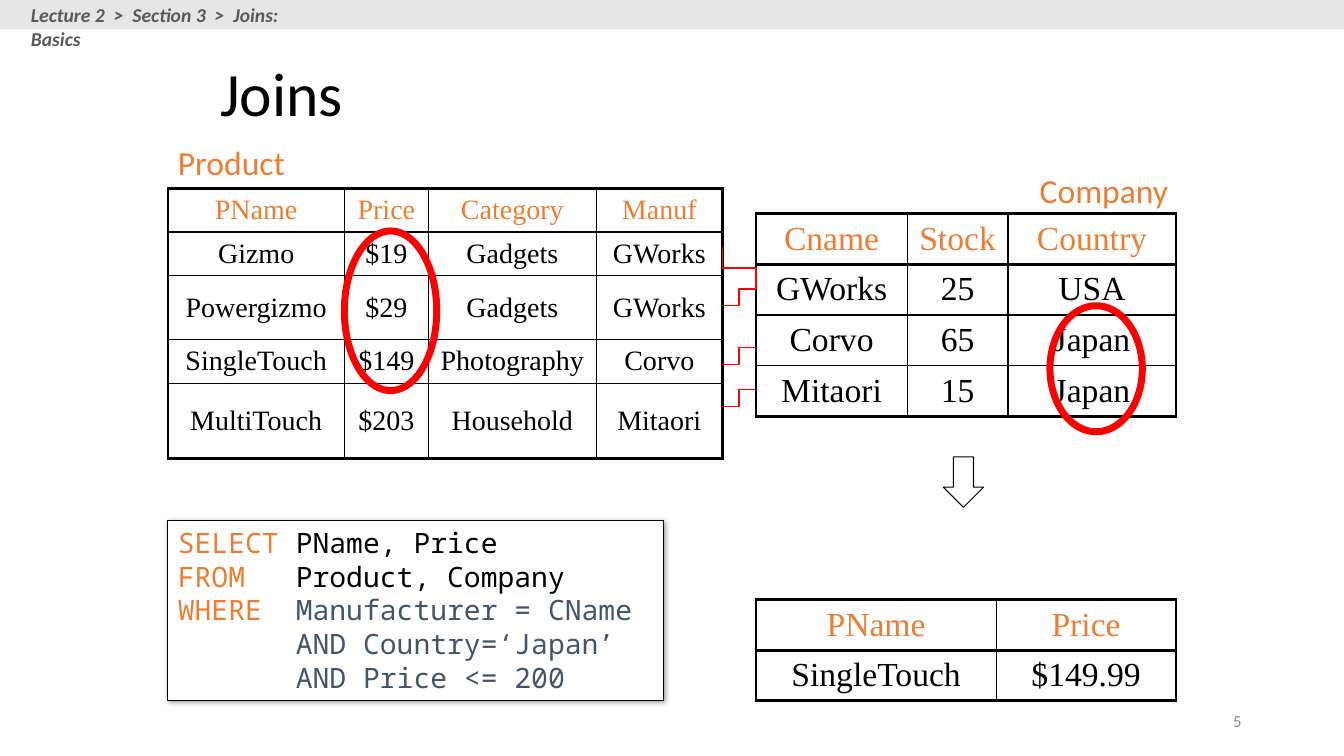
from lxml.etree import SubElement
from pptx import Presentation
from pptx.dml.color import RGBColor
from pptx.enum.shapes import MSO_CONNECTOR, MSO_SHAPE
from pptx.enum.text import MSO_ANCHOR as Anchor, PP_ALIGN as Align
from pptx.oxml import parse_xml
from pptx.oxml.ns import nsdecls, qn
from pptx.util import Inches, Pt

COLORS = {
    "black": "000000", "white": "FFFFFF", "orange": "ED7D31", "red": "FF0000",
    "slate": "44546A", "bar": "E7E6E6", "crumb": "595959", "number": "8C8C8C",
}
COLUMNS, ROWS = 160, 90  # twelve grid units to the inch
THICK, THIN = 2.25, 1

PRODUCTS = [
    ["PName", "Price", "Category", "Manuf"],
    ["Gizmo", "$19", "Gadgets", "GWorks"],
    ["Powergizmo", "$29", "Gadgets", "GWorks"],
    ["SingleTouch", "$149", "Photography", "Corvo"],
    ["MultiTouch", "$203", "Household", "Mitaori"],
]
COMPANIES = [
    ["Cname", "Stock", "Country"],
    ["GWorks", "25", "USA"],
    ["Corvo", "65", "Japan"],
    ["Mitaori", "15", "Japan"],
]
RESULT = [["PName", "Price"], ["SingleTouch", "$149.99"]]
QUERY = [
    ("SELECT", "PName, Price", "black"),
    ("FROM", "Product, Company", "black"),
    ("WHERE", "Manufacturer = CName", "slate"),
    ("", "AND Country=‘Japan’", "slate"),
    ("", "AND Price <= 200", "slate"),
]


def grid(*units):
    return [Inches(unit / 12) for unit in units]


def rgb(color):
    return RGBColor.from_string(COLORS[color])


def style_run(run, size, color, face="Calibri"):
    run.font.size = Pt(size)
    run.font.name = face
    run.font.color.rgb = rgb(color)


def add_label(slide, box, text, size, color, wrap=False):
    frame = slide.shapes.add_textbox(*grid(*box)).text_frame
    frame.word_wrap = wrap
    frame.text = text
    style_run(frame.paragraphs[0].runs[0], size, color)
    return frame


def add_figure(slide, preset, box, fill=None, line=None, width=0.75):
    figure = slide.shapes.add_shape(preset, *grid(*box))
    figure.shadow.inherit = False
    if fill:
        figure.fill.solid()
        figure.fill.fore_color.rgb = rgb(fill)
    else:
        figure.fill.background()
    if line:
        figure.line.color.rgb = rgb(line)
        figure.line.width = Pt(width)
    else:
        figure.line.fill.background()
    return figure


def set_borders(cell, **widths):
    """Draw black sides, given as L, R, T and B widths in points."""
    props = cell._tc.get_or_add_tcPr()
    for index, side in enumerate("LRTB"):
        props.insert(index, parse_xml(
            f'<a:ln{side} {nsdecls("a")} w="{Pt(widths[side])}"><a:solidFill>'
            f'<a:srgbClr val="{COLORS["black"]}"/></a:solidFill></a:ln{side}>'))


def add_relation(slide, left, top, widths, heights, records, size):
    """Add a table with a thick frame and a thick rule below its header."""
    box = grid(left, top, sum(widths), sum(heights))
    table = slide.shapes.add_table(len(heights), len(widths), *box).table
    table.first_row = table.horz_banding = False
    for column, width in zip(table.columns, grid(*widths)):
        column.width = width
    for row, height in zip(table.rows, grid(*heights)):
        row.height = height
    last_row, last_column = len(heights) - 1, len(widths) - 1
    for r, record in enumerate(records):
        for c, value in enumerate(record):
            cell = table.cell(r, c)
            cell.text = value
            cell.vertical_anchor = Anchor.MIDDLE
            cell.fill.solid()
            cell.fill.fore_color.rgb = rgb("white")
            paragraph = cell.text_frame.paragraphs[0]
            paragraph.alignment = Align.CENTER
            style_run(paragraph.runs[0], size, "black" if r else "orange",
                      "Times New Roman")
            set_borders(cell,
                        L=THIN if c else THICK,
                        R=THICK if c == last_column else THIN,
                        T=THICK if r < 2 else THIN,
                        B=THICK if r in (0, last_row) else THIN)


def add_match(slide, start, end, upright=False):
    """Link two rows; an upright link leaves and arrives vertically."""
    (x1, y1), (x2, y2) = start, end
    if upright:
        x, y = (x1 + x2) / 2, (y1 + y2) / 2
        half_w, half_h = (y2 - y1) / 2, (x2 - x1) / 2
        x1, y1, x2, y2 = x + half_w, y - half_h, x - half_w, y + half_h
    link = slide.shapes.add_connector(MSO_CONNECTOR.ELBOW, *grid(x1, y1, x2, y2))
    link.line.color.rgb = rgb("red")
    link.line.width = Pt(1)
    props = link._element.spPr
    SubElement(props, qn("a:effectLst"))
    if upright:
        props.find(qn("a:xfrm")).set("rot", str(270 * 60000))


def add_query(slide, box):
    panel = add_figure(slide, MSO_SHAPE.RECTANGLE, box, "white", "black")
    effects = panel._element.spPr.find(qn("a:effectLst"))
    effects.append(parse_xml(
        f'<a:outerShdw {nsdecls("a")} blurRad="{Pt(4)}" dist="{Pt(1)}" '
        f'dir="{45 * 60000}" algn="tl" rotWithShape="0"><a:srgbClr val="000000">'
        '<a:alpha val="40000"/></a:srgbClr></a:outerShdw>'))
    frame = panel.text_frame
    frame.word_wrap = False
    frame.vertical_anchor = Anchor.TOP
    frame.text = "\n".join(keyword for keyword, _, _ in QUERY)
    for paragraph, (_, clause, color) in zip(frame.paragraphs, QUERY):
        paragraph.alignment = Align.LEFT
        for run in paragraph.runs:
            style_run(run, 20, "orange", "Noto Sans Mono")
        rest = paragraph.add_run()
        rest.text = "\t" + clause
        style_run(rest, 20, color, "Noto Sans Mono")
        tabs = SubElement(paragraph._p.get_or_add_pPr(), qn("a:tabLst"))
        SubElement(tabs, qn("a:tab"), pos=str(Inches(1.17)), algn="l")


def add_title(slide, box, text):
    title = slide.shapes.title
    title.left, title.top, title.width, title.height = grid(*box)
    title.text_frame.text = text
    title.text_frame.vertical_anchor = Anchor.MIDDLE
    heading = title.text_frame.paragraphs[0]
    heading.alignment = Align.LEFT
    heading.line_spacing = 0.9
    style_run(heading.runs[0], 44, "black")


def main():
    deck = Presentation()
    deck.slide_width, deck.slide_height = grid(COLUMNS, ROWS)
    slide = deck.slides.add_slide(deck.slide_layouts[5])

    number = add_label(slide, (113, 83.4, 36, 4.8), "5", 12, "number", wrap=True)
    number.vertical_anchor = Anchor.MIDDLE
    number.paragraphs[0].alignment = Align.RIGHT
    add_title(slide, (25, 4, 108, 15), "Joins")

    add_relation(slide, 20, 22.4, [21, 10, 20, 15], [5, 4.9, 7.6, 5, 9],
                 PRODUCTS, 20)
    add_label(slide, (20, 16.3, 15.2, 6), "Product", 24, "orange")
    add_label(slide, (122.6, 19.6, 17.9, 6), "Company", 24, "orange")
    add_relation(slide, 90, 25.4, [18, 12, 20], [6.05] * 4, COMPANIES, 24)
    add_relation(slide, 90, 71.4, [28.6, 21.4], [6] * 2, RESULT, 24)
    add_figure(slide, MSO_SHAPE.DOWN_ARROW, (112.3, 54.4, 4.8, 6), line="black")

    add_match(slide, (86, 29.4), (90, 34.4), upright=True)
    for level in (36.4, 43.4, 48.4):
        add_match(slide, (86, level), (90, level - 2))
    for ring in ((41, 27.5, 11, 19), (125, 36.4, 11, 15)):
        add_figure(slide, MSO_SHAPE.OVAL, ring, line="red", width=5)

    add_figure(slide, MSO_SHAPE.RECTANGLE, (0, 0, COLUMNS, 3.5), "bar")
    crumb = add_label(slide, (2.5, -0.2, 37.7, 4.1),
                      "Lecture 2  >  Section 3  >  Joins: Basics", 14, "crumb",
                      wrap=True)
    crumb_font = crumb.paragraphs[0].runs[0].font
    crumb_font.bold = crumb_font.italic = True
    add_query(slide, (20, 62, 59, 21.4))
    deck.save("out.pptx")


if __name__ == "__main__":
    main()
